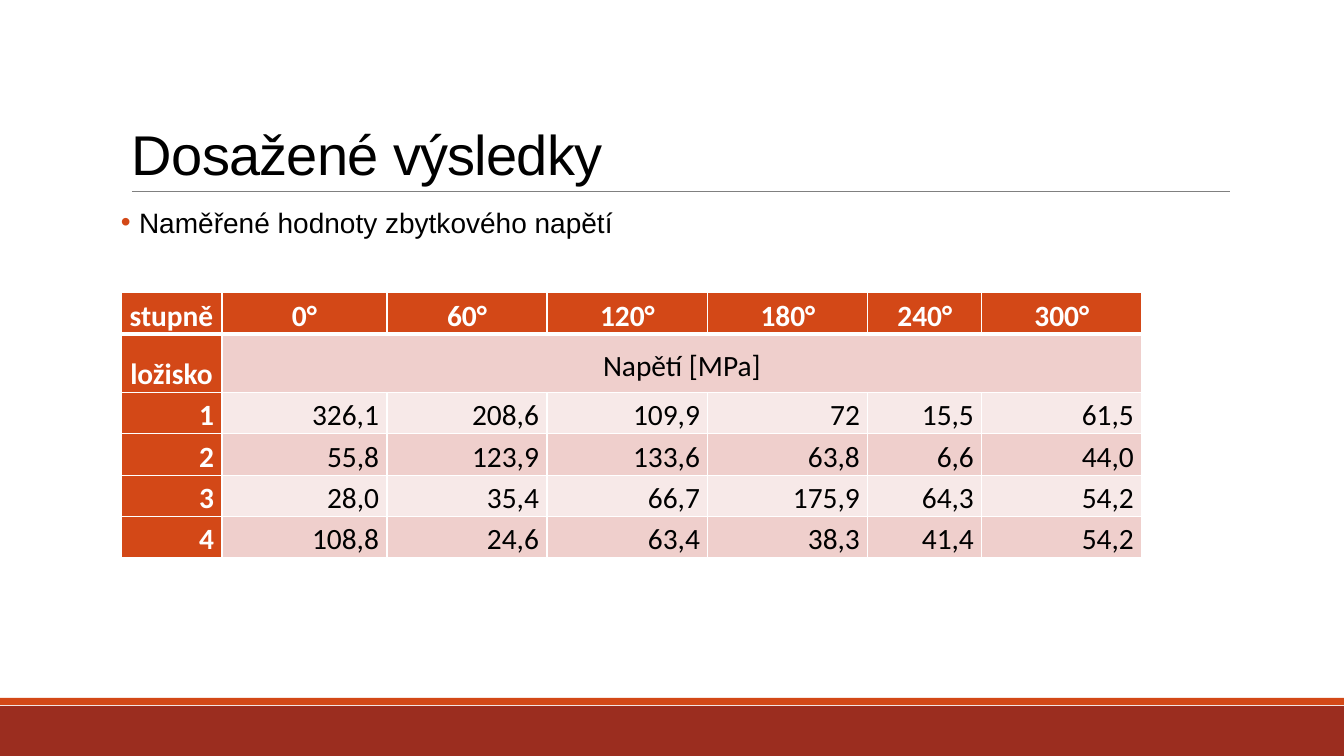
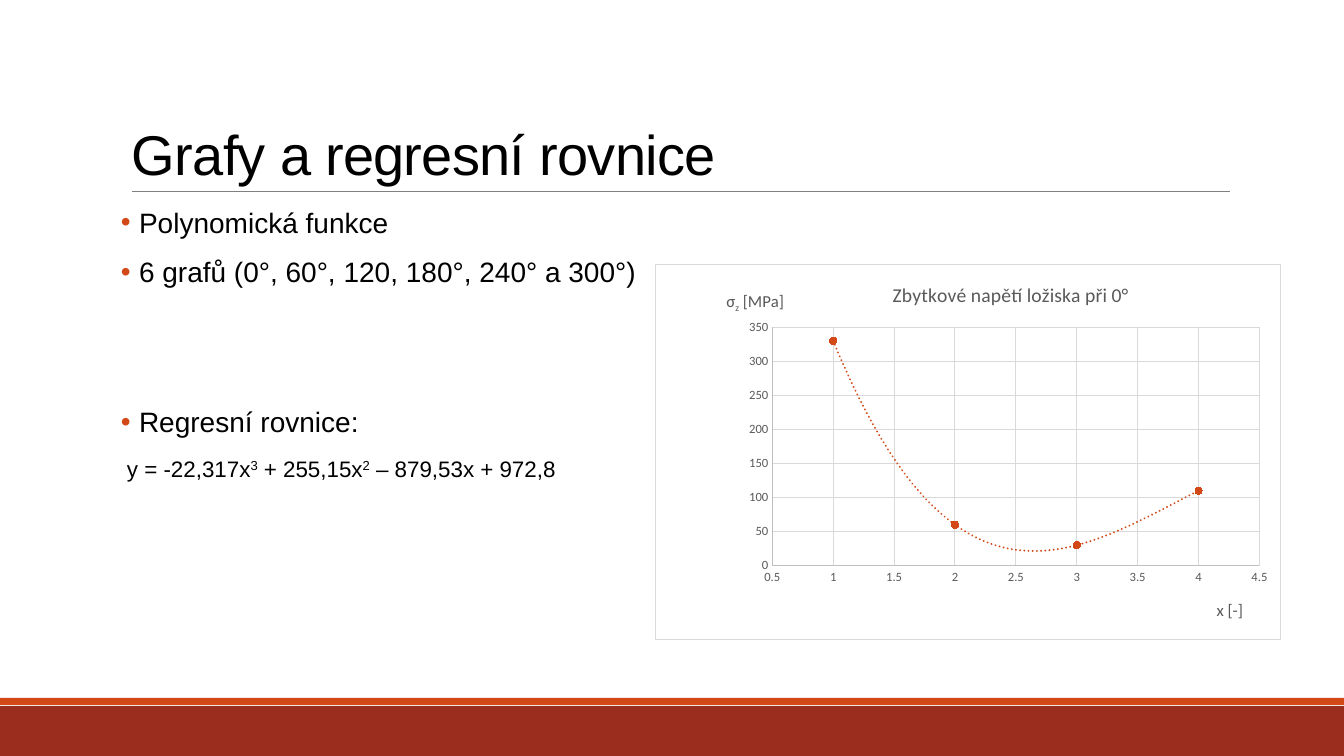
import dataclasses

import lxml.etree
import pptx
import pptx.chart.data
import pptx.dml.color
import pptx.enum.chart
import pptx.enum.shapes
import pptx.enum.text
import pptx.oxml.ns
import pptx.util

EMU_PER_PX = 12192000 / 1344
qn = pptx.oxml.ns.qn
Pt = pptx.util.Pt
ANCHOR = pptx.enum.text.MSO_ANCHOR
ALIGN = pptx.enum.text.PP_ALIGN


def px(length):
    return pptx.util.Emu(round(length * EMU_PER_PX))


@dataclasses.dataclass(frozen=True)
class Theme:
    band: str = "9B2D1F"
    accent: str = "D34817"
    rule: str = "808080"
    text: str = "000000"
    white: str = "FFFFFF"
    row_dark: str = "EFCFCC"
    row_light: str = "F7E9E8"
    chart_text: str = "595959"
    axis: str = "BFBFBF"
    grid: str = "D9D9D9"
    font: str = "Arial"
    data_font: str = "Calibri"
    title_size: int = 40
    body_size: int = 20
    formula_size: int = 16
    table_size: int = 21
    chart_title_size: int = 14
    axis_title_size: int = 12
    tick_size: int = 9


@dataclasses.dataclass(frozen=True)
class Box:
    left: int
    top: int
    width: int
    height: int

    def emu(self):
        return [px(length) for length in dataclasses.astuple(self)]


THEME = Theme()
SLIDE = Box(0, 0, 1344, 756)
TITLE = Box(121, 32, 1109, 160)
BODY = Box(121, 204, 1109, 444)
TABLE = Box(121, 292, 1021, 265)
CHART = Box(655, 264, 626, 376)
PLOT = Box(117, 63, 488, 239)

ANGLES = ["0°", "60°", "120°", "180°", "240°", "300°"]
STRESSES = [
    ["326,1", "208,6", "109,9", "72", "15,5", "61,5"],
    ["55,8", "123,9", "133,6", "63,8", "6,6", "44,0"],
    ["28,0", "35,4", "66,7", "175,9", "64,3", "54,2"],
    ["108,8", "24,6", "63,4", "38,3", "41,4", "54,2"],
]
CHART_STRESSES = [330, 60, 30, 110]
COLUMN_WIDTHS = [101, 165, 160, 161, 160, 114, 160]
ROW_HEIGHTS = [42, 58, 41, 42, 41, 41]


def rgb(value):
    return pptx.dml.color.RGBColor.from_string(value)


def add_xml(parent, tag, **attributes):
    element = lxml.etree.SubElement(parent, qn(tag))
    for name, value in attributes.items():
        element.set(name, str(value))
    return element


def add_solid(parent, color):
    add_xml(add_xml(parent, "a:solidFill"), "a:srgbClr", val=color)


def add_run(paragraph, text, size, color=THEME.text, font=THEME.font, bold=False, baseline=0):
    run = paragraph.add_run()
    run.text = text
    run.font.size = Pt(size)
    run.font.name = font
    run.font.bold = bold
    run.font.color.rgb = rgb(color)
    if baseline:
        run._r.get_or_add_rPr().set("baseline", str(baseline))
    return run


def style_line(line, color, width):
    line.color.rgb = rgb(color)
    line.width = Pt(width)


def add_band(slide, box, color):
    shape = slide.shapes.add_shape(pptx.enum.shapes.MSO_SHAPE.RECTANGLE, *box.emu())
    shape.shadow.inherit = False
    shape.fill.solid()
    shape.fill.fore_color.rgb = rgb(color)
    shape.line.fill.background()


def add_text_box(slide, box, anchor, inset):
    frame = slide.shapes.add_textbox(*box.emu()).text_frame
    frame.word_wrap = True
    frame.vertical_anchor = anchor
    frame.margin_left = frame.margin_right = px(inset)
    frame.margin_top = frame.margin_bottom = px(5)
    return frame


def add_base_slide(presentation, title):
    slide = presentation.slides.add_slide(presentation.slide_layouts[6])
    add_band(slide, Box(0, 706, SLIDE.width, 50), THEME.band)
    add_band(slide, Box(0, 698, SLIDE.width, 7), THEME.accent)
    rule = slide.shapes.add_connector(
        pptx.enum.shapes.MSO_CONNECTOR.STRAIGHT, px(132), px(191), px(1230), px(191))
    style_line(rule.line, THEME.rule, 0.5)
    add_xml(rule.element.spPr, "a:effectLst")
    paragraph = add_text_box(slide, TITLE, ANCHOR.BOTTOM, 11).paragraphs[0]
    paragraph.line_spacing = 0.85
    run = add_run(paragraph, title, THEME.title_size)
    run._r.get_or_add_rPr().set("spc", "-50")
    return slide


def format_body(paragraph, margin, space_before=12):
    paragraph.line_spacing = 0.9
    paragraph.space_before = Pt(space_before)
    paragraph.space_after = Pt(2)
    properties = paragraph._p.get_or_add_pPr()
    properties.set("marL", str(px(margin)))
    return properties


def add_bullet(paragraph, text, space_before=12):
    properties = format_body(paragraph, 18, space_before)
    properties.set("indent", str(px(-18)))
    add_xml(add_xml(properties, "a:buClr"), "a:srgbClr", val=THEME.accent)
    add_xml(properties, "a:buFont", typeface=THEME.font)
    add_xml(properties, "a:buChar", char="•")
    add_run(paragraph, text, THEME.body_size)


def add_formula(paragraph, parts):
    format_body(paragraph, 6)
    for text, baseline in parts:
        add_run(paragraph, text, THEME.formula_size, baseline=baseline)


def set_borders(cell, top, bottom):
    properties = cell._tc.get_or_add_tcPr()
    sides = [("a:lnL", 1), ("a:lnR", 1), ("a:lnT", top), ("a:lnB", bottom)]
    for position, (tag, width) in enumerate(sides):
        border = add_xml(properties, tag, w=Pt(width))
        add_solid(border, THEME.white)
        properties.insert(position, border)


def fill_cell(cell, text, row, column):
    heading = row == 0 or column == 0
    band = THEME.row_light if row > 1 and row % 2 == 0 else THEME.row_dark
    unit = row == 1 and column > 0
    cell.fill.solid()
    cell.fill.fore_color.rgb = rgb(THEME.accent if heading else band)
    cell.margin_left = cell.margin_right = px(17 if unit else 8)
    cell.margin_top = cell.margin_bottom = px(9 if unit else 0)
    cell.vertical_anchor = ANCHOR.TOP if unit else ANCHOR.BOTTOM
    set_borders(cell, 3 if row == 1 else 1, 3 if row == 0 else 1)
    if text:
        paragraph = cell.text_frame.paragraphs[0]
        paragraph.line_spacing = 1.15
        paragraph.alignment = ALIGN.RIGHT if row > 1 else ALIGN.CENTER
        add_run(paragraph, text, THEME.table_size,
                THEME.white if heading else THEME.text, THEME.data_font, heading)


def add_stress_table(slide, box):
    rows = [["stupně", *ANGLES], ["ložisko", "Napětí [MPa]"] + [""] * 5]
    rows += [[str(number), *values] for number, values in enumerate(STRESSES, 1)]
    table = slide.shapes.add_table(len(rows), len(COLUMN_WIDTHS), *box.emu()).table
    table.first_row = table.horz_banding = False
    for column, width in zip(table.columns, COLUMN_WIDTHS):
        column.width = px(width)
    for row, height in zip(table.rows, ROW_HEIGHTS):
        row.height = px(height)
    table.cell(1, 1).merge(table.cell(1, len(ANGLES)))
    for row, texts in enumerate(rows):
        for column, text in enumerate(texts):
            fill_cell(table.cell(row, column), text, row, column)


def make_layout(target=None, **fractions):
    layout = lxml.etree.Element(qn("c:layout"))
    manual = add_xml(layout, "c:manualLayout")
    if target:
        add_xml(manual, "c:layoutTarget", val=target)
    for name in ("xMode", "yMode"):
        add_xml(manual, f"c:{name}", val="edge")
    for name, value in fractions.items():
        add_xml(manual, f"c:{name}", val=value)
    return layout


def remove_layout(element):
    for layout in element.findall(qn("c:layout")):
        element.remove(layout)


def write_chart_title(title, parts, size, box, left, top):
    paragraph = title.text_frame.paragraphs[0]
    for text, baseline in parts:
        add_run(paragraph, text, size, THEME.chart_text, THEME.data_font, baseline=baseline)
    remove_layout(title.element)
    layout = make_layout(x=left / box.width, y=top / box.height)
    title.element.find(qn("c:tx")).addnext(layout)
    title.element.find(".//" + qn("a:bodyPr")).set("rot", "0")


def style_axis(axis, minimum, maximum, step):
    axis.minimum_scale, axis.maximum_scale, axis.major_unit = minimum, maximum, step
    axis.major_tick_mark = axis.minor_tick_mark = pptx.enum.chart.XL_TICK_MARK.NONE
    axis.has_major_gridlines = True
    style_line(axis.major_gridlines.format.line, THEME.grid, 0.75)
    style_line(axis.format.line, THEME.axis, 0.75)
    labels = axis.tick_labels
    labels.number_format, labels.number_format_is_linked = "General", False
    labels.font.size = Pt(THEME.tick_size)
    labels.font.color.rgb = rgb(THEME.chart_text)


def add_trend(series_element):
    trend = lxml.etree.Element(qn("c:trendline"))
    line = add_xml(add_xml(trend, "c:spPr"), "a:ln", w=Pt(1.5), cap="rnd")
    add_solid(line, THEME.accent)
    add_xml(line, "a:prstDash", val="sysDot")
    for tag, value in (("trendlineType", "poly"), ("order", 3), ("dispRSqr", 0), ("dispEq", 0)):
        add_xml(trend, f"c:{tag}", val=value)
    series_element.find(qn("c:xVal")).addprevious(trend)


def frame_chart(chart, box, plot):
    root = chart.element
    body = root.find(qn("c:chart"))
    for corners in root.findall(qn("c:roundedCorners")):
        root.remove(corners)
    body.addprevious(add_xml(root, "c:roundedCorners", val=0))
    properties = add_xml(root, "c:spPr")
    add_solid(properties, THEME.white)
    add_solid(add_xml(properties, "a:ln", w=Pt(0.75)), THEME.grid)
    body.addnext(properties)
    area = body.find(qn("c:plotArea"))
    remove_layout(area)
    area.insert(0, make_layout(
        "inner", x=plot.left / box.width, y=plot.top / box.height,
        w=plot.width / box.width, h=plot.height / box.height))


def add_stress_chart(slide, box):
    data = pptx.chart.data.XyChartData()
    points = data.add_series("Napětí")
    for number, stress in enumerate(CHART_STRESSES, 1):
        points.add_data_point(number, stress)
    chart = slide.shapes.add_chart(
        pptx.enum.chart.XL_CHART_TYPE.XY_SCATTER, *box.emu(), data).chart
    chart.has_legend = False
    chart.font.size = Pt(10)
    chart.font.name = THEME.data_font
    chart.plots[0].vary_by_categories = False
    style_axis(chart.category_axis, 0.5, 4.5, 0.5)
    style_axis(chart.value_axis, 0, 350, 50)
    write_chart_title(chart.chart_title, [("Zbytkové napětí ložiska při 0°", 0)],
                      THEME.chart_title_size, box, 234, 13)
    write_chart_title(chart.category_axis.axis_title, [("x [-]", 0)],
                      THEME.axis_title_size, box, 559, 332)
    write_chart_title(chart.value_axis.axis_title, [("σ", 0), ("z", -25000), (" [MPa]", 0)],
                      THEME.axis_title_size, box, 68, 22)
    series = chart.plots[0].series[0]
    series.smooth = False
    series.format.line.fill.background()
    series.marker.style = pptx.enum.chart.XL_MARKER_STYLE.CIRCLE
    series.marker.size = 5
    series.marker.format.fill.solid()
    series.marker.format.fill.fore_color.rgb = rgb(THEME.accent)
    style_line(series.marker.format.line, THEME.accent, 0.75)
    add_trend(chart.element.find(".//" + qn("c:ser")))
    frame_chart(chart, box, PLOT)


def build_results_slide(presentation):
    slide = add_base_slide(presentation, "Dosažené výsledky")
    frame = add_text_box(slide, BODY, ANCHOR.TOP, 0)
    add_bullet(frame.paragraphs[0], "Naměřené hodnoty zbytkového napětí")
    add_stress_table(slide, TABLE)


def build_regression_slide(presentation):
    slide = add_base_slide(presentation, "Grafy a regresní rovnice")
    frame = add_text_box(slide, BODY, ANCHOR.TOP, 0)
    add_bullet(frame.paragraphs[0], "Polynomická funkce")
    add_bullet(frame.add_paragraph(), "6 grafů (0°, 60°, 120, 180°, 240° a 300°)")
    add_bullet(frame.add_paragraph(), "Regresní rovnice:", 83)
    add_formula(frame.add_paragraph(), [
        ("y = -22,317x", 0), ("3", 30000), (" + 255,15x", 0),
        ("2", 30000), (" – 879,53x + 972,8", 0)])
    add_stress_chart(slide, CHART)


def main():
    presentation = pptx.Presentation()
    presentation.slide_width, presentation.slide_height = px(SLIDE.width), px(SLIDE.height)
    build_results_slide(presentation)
    build_regression_slide(presentation)
    presentation.save("out.pptx")


if __name__ == "__main__":
    main()
